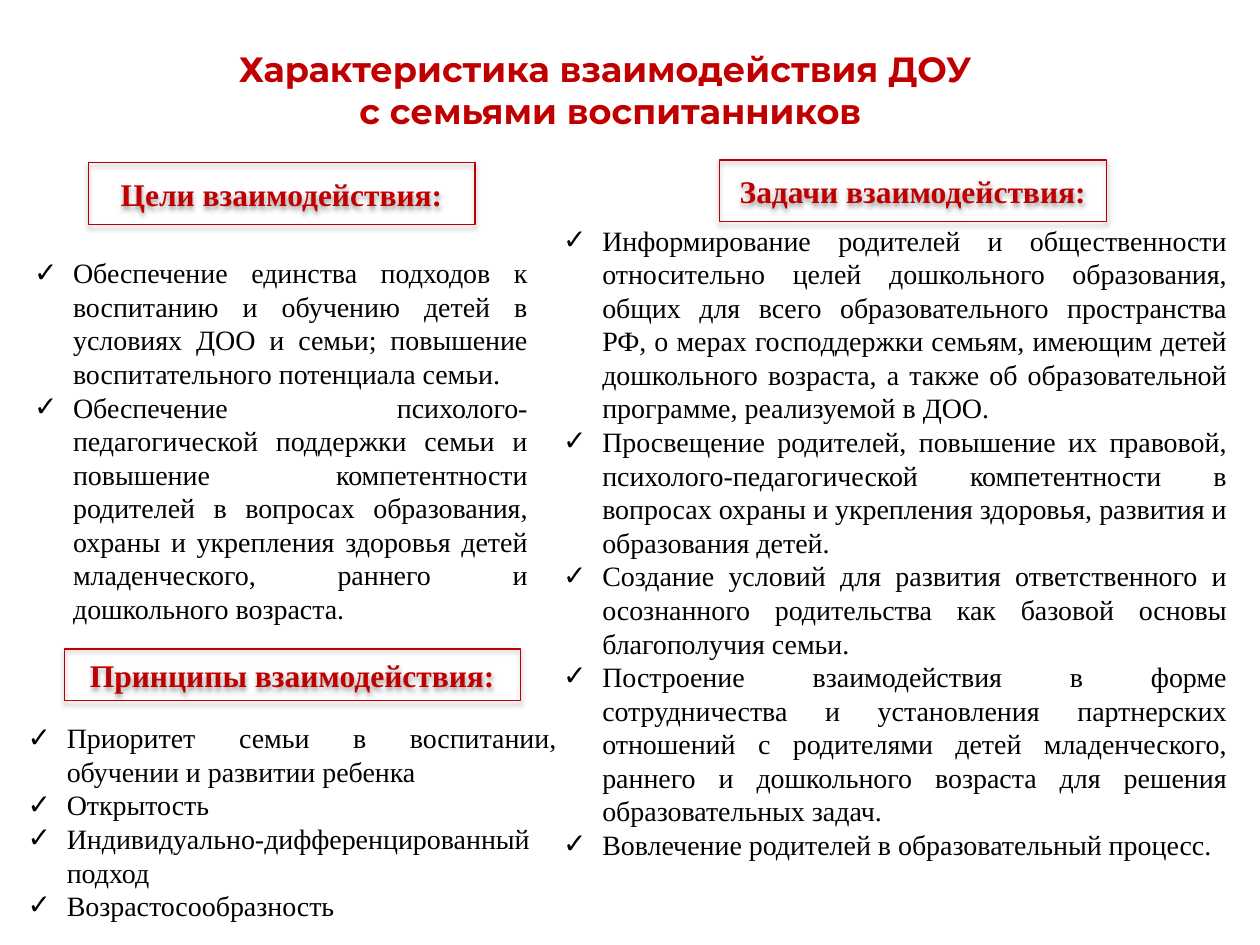
from collections import namedtuple

from lxml import etree
from pptx import Presentation
from pptx.dml.color import RGBColor
from pptx.enum.shapes import MSO_SHAPE
from pptx.enum.text import MSO_ANCHOR, MSO_AUTO_SIZE, PP_ALIGN
from pptx.oxml.ns import qn
from pptx.util import Inches, Pt

RECT = MSO_SHAPE.RECTANGLE
TOP, MIDDLE = MSO_ANCHOR.TOP, MSO_ANCHOR.MIDDLE
NO_FIT = MSO_AUTO_SIZE.NONE
CENTER, JUSTIFY = PP_ALIGN.CENTER, PP_ALIGN.JUSTIFY
COMPARISON_LAYOUT = 4

# The slide is a grid of 100 columns by 75 rows
CELL = Inches(0.1)
COLUMNS, ROWS = 100, 75
Box = namedtuple("Box", "col row cols rows")

RED, BLACK = RGBColor(0xC0, 0, 0), RGBColor(0, 0, 0)
THEME = {
    "title": {"name": "Montserrat", "size": Pt(20), "bold": True, "color": RED},
    "heading": {"name": "Times New Roman", "size": Pt(18), "bold": True, "color": RED},
    "list": {"name": "Times New Roman", "size": Pt(16), "bold": False, "color": BLACK},
    "line": Pt(0.75),
    "indent": Inches(0.31),
    "bullet": "✓",
    "shadow": {"blurRad": Pt(3.1), "dist": Pt(1.6), "dir": 90 * 60000, "rotWithShape": 0},
    "shadow_alpha": 38000,
}

TITLE = ["Характеристика взаимодействия ДОУ ", "с семьями воспитанников"]
TITLE_BOX = Box(9.1, 3.3, 78.7, 7.7)

# Heading, its box, list placeholder, list box, list items
SECTIONS = [
    ("Цели взаимодействия:", Box(7, 12.9, 30.7, 4.9), 2, Box(1.7, 19.8, 41.2, 30.6), [
        "Обеспечение единства подходов к воспитанию и обучению детей в условиях ДОО "
        "и семьи; повышение воспитательного потенциала семьи.",
        "Обеспечение психолого-педагогической поддержки семьи и повышение "
        "компетентности родителей в вопросах образования, охраны и укрепления "
        "здоровья детей младенческого, раннего и дошкольного возраста.",
    ]),
    ("Задачи взаимодействия:", Box(57.1, 12.7, 30.7, 4.9), 4, Box(43.7, 17.2, 54.7, 52.2), [
        "Информирование родителей и общественности относительно целей дошкольного "
        "образования, общих для всего образовательного пространства РФ, о мерах "
        "господдержки семьям, имеющим детей дошкольного возраста, а также об "
        "образовательной программе, реализуемой в ДОО.",
        "Просвещение родителей, повышение их правовой, психолого-педагогической "
        "компетентности в вопросах охраны и укрепления здоровья, развития и "
        "образования детей.",
        "Создание условий для развития ответственного и осознанного родительства "
        "как базовой основы благополучия семьи.",
        "Построение взаимодействия в форме сотрудничества и установления "
        "партнерских отношений с родителями детей младенческого, раннего и "
        "дошкольного возраста для решения образовательных задач.",
        "Вовлечение родителей в образовательный процесс.",
    ]),
    ("Принципы взаимодействия:", Box(5.1, 51.5, 36.2, 4.1), 1, Box(1.2, 56.7, 44, 17.2), [
        "Приоритет семьи в воспитании, обучении и развитии ребенка",
        "Открытость",
        "Индивидуально-дифференцированный подход",
        "Возрастосообразность",
    ]),
]


def place(shape, box):
    edges = dict(zip(("left", "top", "width", "height"), box))
    for edge, cells in edges.items():
        setattr(shape, edge, round(cells * CELL))


def write(shape, lines, style, align, anchor):
    """Fill a shape with one paragraph per line and return the paragraphs."""
    frame = shape.text_frame
    frame_format = {"word_wrap": True, "auto_size": NO_FIT, "vertical_anchor": anchor}
    for name, value in frame_format.items():
        setattr(frame, name, value)
    frame.text = "\n".join(lines)
    paragraph_format = {"alignment": align, "line_spacing": 1.0,
                        "space_before": Pt(0), "space_after": Pt(0)}
    for paragraph in frame.paragraphs:
        for name, value in paragraph_format.items():
            setattr(paragraph, name, value)
        font = paragraph.runs[0].font
        for name in ("name", "size", "bold"):
            setattr(font, name, style[name])
        font.color.rgb = style["color"]
    return frame.paragraphs


def add_title(slide, box):
    title = slide.shapes.title
    place(title, box)
    write(title, TITLE, THEME["title"], CENTER, TOP)


def add_soft_shadow(shape):
    shape.shadow.inherit = False
    effects = shape._element.spPr.find(qn("a:effectLst"))
    shadow = etree.SubElement(effects, qn("a:outerShdw"))
    for name, value in THEME["shadow"].items():
        shadow.set(name, str(value))
    color = etree.SubElement(shadow, qn("a:srgbClr"), val=str(BLACK))
    etree.SubElement(color, qn("a:alpha"), val=str(THEME["shadow_alpha"]))


def add_heading(slide, box, text):
    heading = slide.shapes.add_shape(RECT, 0, 0, CELL, CELL)
    place(heading, box)
    heading.fill.background()
    heading.line.color.rgb = RED
    heading.line.width = THEME["line"]
    add_soft_shadow(heading)
    write(heading, [text], THEME["heading"], CENTER, MIDDLE)


def add_checklist(slide, box, placeholder_index, items):
    checklist = slide.placeholders[placeholder_index]
    place(checklist, box)
    for paragraph in write(checklist, items, THEME["list"], JUSTIFY, TOP):
        properties = paragraph._p.get_or_add_pPr()
        properties.set("marL", str(THEME["indent"]))
        properties.set("indent", str(-THEME["indent"]))
        etree.SubElement(properties, qn("a:buChar"), char=THEME["bullet"])


def main():
    deck = Presentation()
    deck.slide_width, deck.slide_height = COLUMNS * CELL, ROWS * CELL
    slide = deck.slides.add_slide(deck.slide_layouts[COMPARISON_LAYOUT])

    add_title(slide, TITLE_BOX)
    for heading, heading_box, placeholder_index, list_box, items in SECTIONS:
        add_heading(slide, heading_box, heading)
        add_checklist(slide, list_box, placeholder_index, items)

    # Remove the placeholder that no list uses
    for placeholder in list(slide.placeholders):
        if not placeholder.text_frame.text:
            placeholder._element.getparent().remove(placeholder._element)

    deck.save("out.pptx")


if __name__ == "__main__":
    main()
